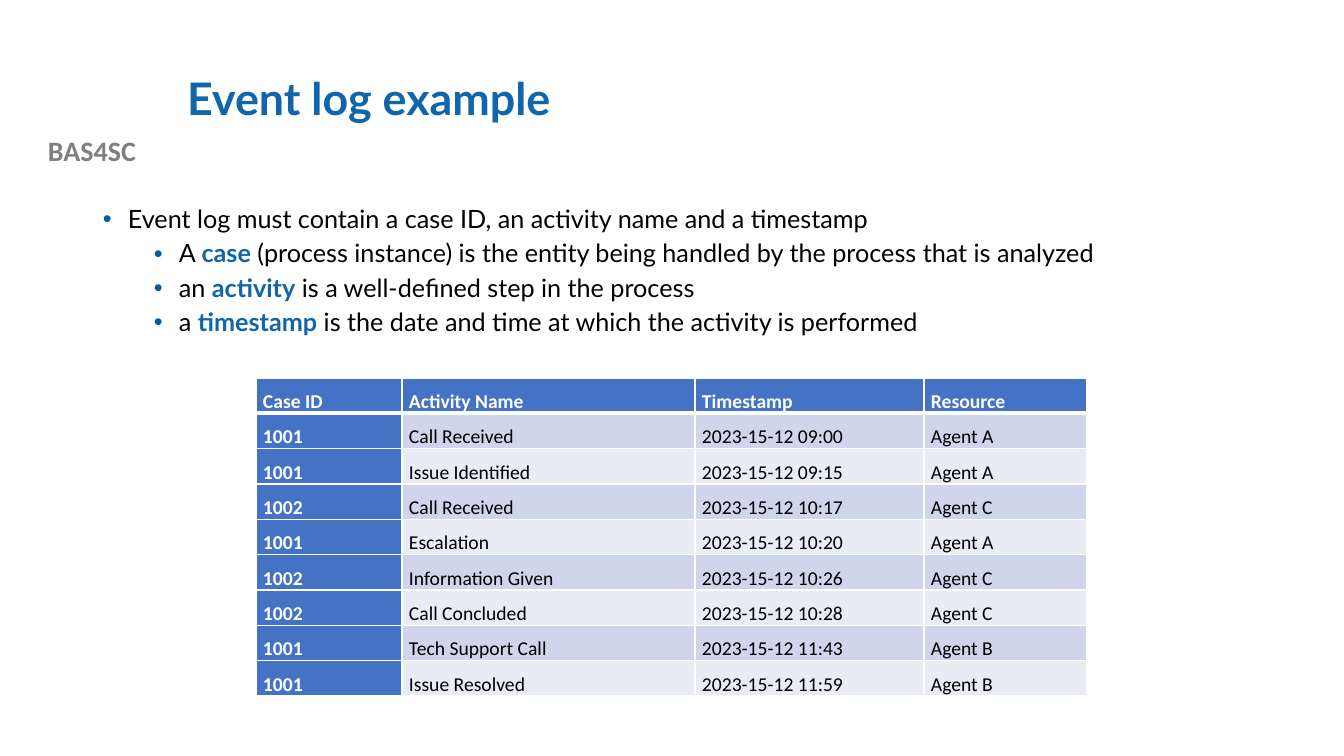
from lxml import etree
from pptx import Presentation
from pptx import util as u
from pptx.dml.color import RGBColor
from pptx.enum import text
from pptx.oxml import parse_xml
from pptx.oxml.ns import nsdecls

# Content
TITLE = "Event log example"
PROJECT = "BAS4SC"
# Each bullet: level, then (words, is key term)
BULLETS = [
    (0, [("Event log must contain a case ID, an activity name and a timestamp", False)]),
    (1, [("A ", False), ("case", True),
         (" (process instance) is the entity being handled by the process that is analyzed", False)]),
    (1, [("an ", False), ("activity", True), (" is a well-defined step in the process", False)]),
    (1, [("a ", False), ("timestamp", True),
         (" is the date and time at which the activity is performed", False)]),
]
EVENT_LOG = [
    ("Case ID", "Activity Name", "Timestamp", "Resource"),
    ("1001", "Call Received", "2023-15-12 09:00", "Agent A"),
    ("1001", "Issue Identified", "2023-15-12 09:15", "Agent A"),
    ("1002", "Call Received", "2023-15-12 10:17", "Agent C"),
    ("1001", "Escalation", "2023-15-12 10:20", "Agent A"),
    ("1002", "Information Given", "2023-15-12 10:26", "Agent C"),
    ("1002", "Call Concluded", "2023-15-12 10:28", "Agent C"),
    ("1001", "Tech Support Call", "2023-15-12 11:43", "Agent B"),
    ("1001", "Issue Resolved", "2023-15-12 11:59", "Agent B"),
]

# Layout in px
SLIDE_SIZE = (1344, 756)
TITLE_BOX = (177, 40, 1075, 123)
PROJECT_BOX = (0, 129, 184, 44)
BULLET_BOX = (93, 202, 1159, 480)
TABLE_CORNER = (256, 378)
COLUMN_WIDTHS = (146, 293, 229, 163)
ROW_HEIGHT = 35
CELL_INSET = 7
HANGING = 25
LEVEL_INDENTS = (25, 76)

# Formats
BLUE, BULLET_BLUE, HEADER_BLUE = "1065AB", "015BA6", "4472C4"
BLACK, WHITE, GREY = "000000", "FFFFFF", "808080"
BANDS = ("E9EBF5", "CFD5EA")
TITLE_FONT = {"name": "Lato", "size": u.Pt(32), "bold": True}
PROJECT_FONT = {"name": "Calibri", "size": u.Pt(20), "bold": True}
BULLET_FONT = {"name": "Lato", "size": u.Pt(18)}
CELL_FONT = {"name": "Calibri", "size": u.Pt(14)}
CELL_SPACING = {"line_spacing": 1.5, "space_after": u.Pt(6)}
CELL_MARGINS = {"margin_top": 0, "margin_bottom": 0}


def px(length):
    return u.Emu(round(length * 914400 / 100.8))


def color(hex_string):
    return RGBColor.from_string(hex_string)


def apply(target, formats):
    for name, value in formats.items():
        setattr(target, name, value)


def add_run(paragraph, words, formats, hex_string):
    run = paragraph.add_run()
    run.text = words
    apply(run.font, formats)
    run.font.color.rgb = color(hex_string)


def add_bullet(paragraph, level):
    properties = paragraph._p.get_or_add_pPr()
    properties.set("marL", str(px(LEVEL_INDENTS[level])))
    properties.set("indent", str(-px(HANGING)))
    for xml in (f'<a:buClr {nsdecls("a")}><a:srgbClr val="{BULLET_BLUE}"/></a:buClr>',
                f'<a:buFont {nsdecls("a")} typeface="Arial"/>',
                f'<a:buChar {nsdecls("a")} char="•"/>'):
        properties.append(parse_xml(xml))


def add_borders(cell, widths):
    properties = cell._tc.get_or_add_tcPr()
    for side, points in widths.items():
        properties.append(parse_xml(
            f'<a:ln{side} {nsdecls("a")} w="{u.Pt(points)}"><a:solidFill>'
            f'<a:srgbClr val="{WHITE}"/></a:solidFill></a:ln{side}>'))


def add_text_box(slide, box):
    shape = slide.shapes.add_textbox(*map(px, box))
    shape.text_frame.word_wrap = True
    return shape.text_frame


def add_title(slide):
    title = slide.shapes.title
    title.left, title.top, title.width, title.height = map(px, TITLE_BOX)
    title.text_frame.vertical_anchor = text.MSO_ANCHOR.MIDDLE
    paragraph = title.text_frame.paragraphs[0]
    apply(paragraph, {"alignment": text.PP_ALIGN.LEFT, "line_spacing": 0.9})
    add_run(paragraph, TITLE, TITLE_FONT, BLUE)


def add_project_label(slide):
    paragraph = add_text_box(slide, PROJECT_BOX).paragraphs[0]
    paragraph.alignment = text.PP_ALIGN.CENTER
    add_run(paragraph, PROJECT, PROJECT_FONT, GREY)


def add_bullets(slide):
    frame = add_text_box(slide, BULLET_BOX)
    for index, (level, runs) in enumerate(BULLETS):
        paragraph = frame.add_paragraph() if index else frame.paragraphs[0]
        add_bullet(paragraph, level)
        apply(paragraph, {"level": level, "line_spacing": 0.9,
                          "space_before": u.Pt(5 if index else 0)})
        for words, is_key in runs:
            add_run(paragraph, words, {**BULLET_FONT, "bold": is_key}, BLUE if is_key else BLACK)


def add_event_log(slide):
    size = (sum(COLUMN_WIDTHS), ROW_HEIGHT * len(EVENT_LOG))
    table = slide.shapes.add_table(len(EVENT_LOG), len(COLUMN_WIDTHS),
                                   *map(px, TABLE_CORNER + size)).table
    table.horz_banding = False
    for column, width in zip(table.columns, COLUMN_WIDTHS):
        column.width = px(width)
    for r, values in enumerate(EVENT_LOG):
        table.rows[r].height = px(ROW_HEIGHT)
        for c, value in enumerate(values):
            cell = table.cell(r, c)
            is_header = r == 0
            is_heading = is_header or c == 0
            apply(cell, {**CELL_MARGINS, "margin_left": px(CELL_INSET), "margin_right": px(CELL_INSET)})
            cell.vertical_anchor = text.MSO_ANCHOR.MIDDLE if is_header else text.MSO_ANCHOR.TOP
            # The rule under the header row is thicker
            add_borders(cell, {"L": 1, "R": 1, "T": 3 if r == 1 else 1, "B": 3 if is_header else 1})
            cell.fill.solid()
            cell.fill.fore_color.rgb = color(HEADER_BLUE if is_heading else BANDS[r % 2])
            paragraph = cell.text_frame.paragraphs[0]
            apply(paragraph, CELL_SPACING)
            paragraph.alignment = text.PP_ALIGN.LEFT if is_header else text.PP_ALIGN.JUSTIFY
            add_run(paragraph, value, {**CELL_FONT, "bold": is_heading}, WHITE if is_heading else BLACK)


def main():
    presentation = Presentation()
    presentation.slide_width, presentation.slide_height = map(px, SLIDE_SIZE)
    slide = presentation.slides.add_slide(presentation.slide_layouts[5])
    add_title(slide)
    add_project_label(slide)
    add_event_log(slide)
    add_bullets(slide)
    presentation.save("out.pptx")


if __name__ == "__main__":
    main()
